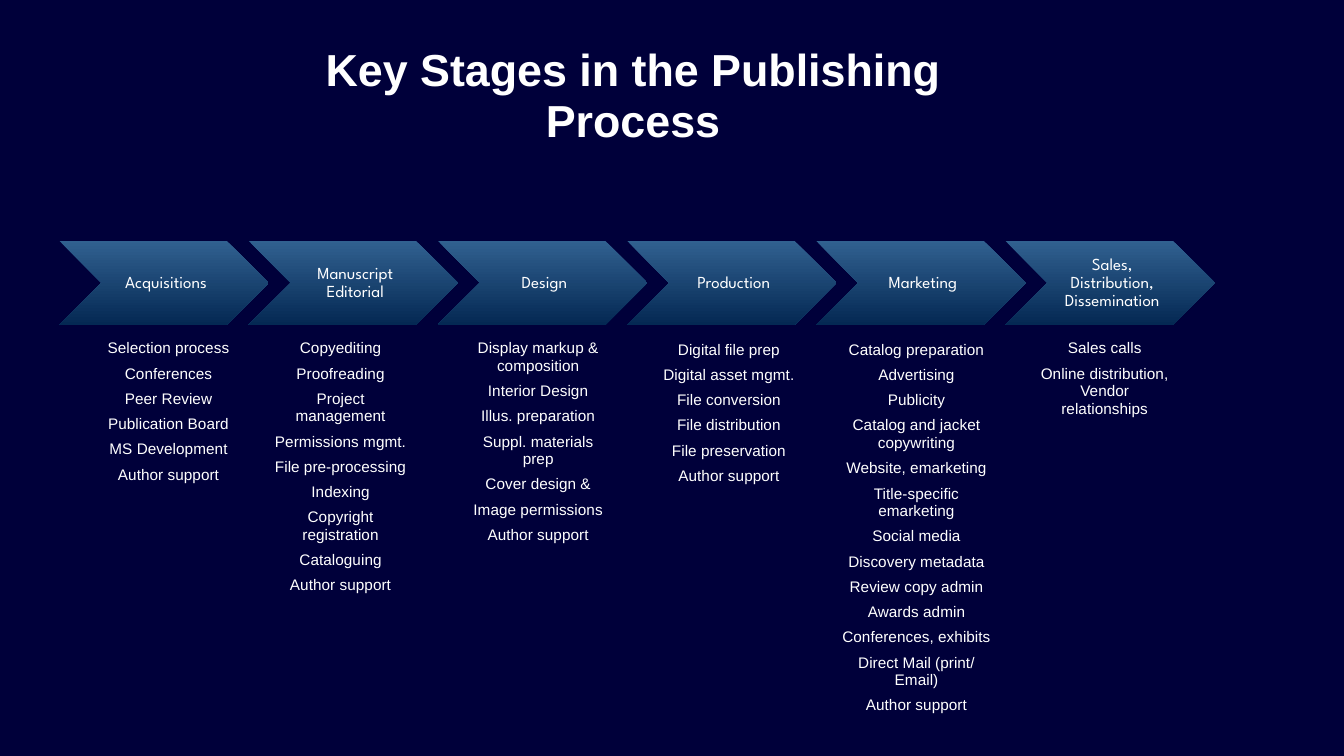
from pptx import Presentation
from pptx.dml.color import RGBColor
from pptx.enum.shapes import MSO_SHAPE
from pptx.enum.text import MSO_ANCHOR, MSO_AUTO_SIZE, PP_ALIGN
from pptx.util import Inches, Pt

NAVY = RGBColor(0x00, 0x00, 0x3A)
STEEL = RGBColor(0x31, 0x61, 0x90)
DEEP_BLUE = RGBColor(0x04, 0x28, 0x53)
WHITE = RGBColor(0xFF, 0xFF, 0xFF)

TITLE = "Key Stages in the Publishing Process"

# Stage name, left, top and width of its task list, tasks
STAGES = [
    ("Acquisitions", 0.64, 2.48, 1.23,
     ["Selection process", "Conferences", "Peer Review", "Publication Board",
      "MS Development", "Author support"]),
    ("Manuscript Editorial", 1.92, 2.48, 1.23,
     ["Copyediting", "Proofreading", "Project management",
      "Permissions mgmt.", "File pre-processing", "Indexing",
      "Copyright registration", "Cataloguing", "Author support"]),
    ("Design", 3.39, 2.48, 1.23,
     ["Display markup & composition", "Interior Design",
      "Illus. preparation", "Suppl. materials prep", "Cover design &",
      "Image permissions", "Author support"]),
    ("Production", 4.81, 2.49, 1.23,
     ["Digital file prep", "Digital asset mgmt.", "File conversion",
      "File distribution", "File preservation", "Author support"]),
    ("Marketing", 6.14, 2.49, 1.36,
     ["Catalog preparation", "Advertising", "Publicity",
      "Catalog and jacket copywriting", "Website, emarketing",
      "Title-specific emarketing", "Social media", "Discovery metadata",
      "Review copy admin", "Awards admin", "Conferences, exhibits",
      "Direct Mail (print/ Email)", "Author support"]),
    ("Sales, Distribution, Dissemination", 7.61, 2.48, 1.22,
     ["Sales calls", "Online distribution, Vendor relationships"]),
]

# Chevron row
CHEVRON_LEFT, CHEVRON_TOP = 0.44, 1.79
CHEVRON_W, CHEVRON_H = 1.56, 0.63
CHEVRON_PITCH = 1.408

# Task lists
LIST_SIZE = 8.25
LINE_H, TASK_GAP = 0.13, 0.06


def write(sp, lines, *, size, font="Arial", bold=False, spacing=0.95, gap=0,
          anchor=MSO_ANCHOR.TOP, insets=(0.1, 0.05, 0.1, 0.05)):
    """Fill a shape with centred white paragraphs."""
    tf = sp.text_frame
    tf.word_wrap = True
    tf.auto_size = MSO_AUTO_SIZE.NONE
    tf.vertical_anchor = anchor
    (tf.margin_left, tf.margin_top,
     tf.margin_right, tf.margin_bottom) = map(Inches, insets)
    for i, line in enumerate(lines):
        p = tf.add_paragraph() if i else tf.paragraphs[0]
        p.alignment = PP_ALIGN.CENTER
        p.line_spacing = spacing
        p.space_before = Pt(gap if i else 0)
        r = p.add_run()
        r.text = line
        r.font.name = font
        r.font.size = Pt(size)
        r.font.bold = bold
        r.font.color.rgb = WHITE


prs = Presentation()
prs.slide_width, prs.slide_height = Inches(10), Inches(10) * 9 // 16
s = prs.slides.add_slide(prs.slide_layouts[5])
s.background.fill.solid()
s.background.fill.fore_color.rgb = NAVY

# Title
title = s.shapes.title
title.left, title.top = Inches(1.92), Inches(0.29)
title.width, title.height = Inches(5.58), Inches(1.31)
write(title, [TITLE], size=24, bold=True)

for i, (stage, left, top, width, tasks) in enumerate(STAGES):
    # Stage chevron
    sp = s.shapes.add_shape(
        MSO_SHAPE.CHEVRON, Inches(CHEVRON_LEFT + i * CHEVRON_PITCH),
        Inches(CHEVRON_TOP), Inches(CHEVRON_W), Inches(CHEVRON_H))
    sp.shadow.inherit = False
    sp.line.fill.background()
    sp.fill.gradient()
    sp.fill.gradient_angle = 270
    for stop, color, position in zip(sp.fill.gradient_stops,
                                     (STEEL, DEEP_BLUE), (0, 1)):
        stop.color.rgb = color
        stop.position = position
    write(sp, [stage], size=9, font="League Spartan", spacing=0.9,
          anchor=MSO_ANCHOR.MIDDLE, insets=(0.04, 0.01, 0.01, 0.01))

    # Task list below the chevron
    height = 0.1 + len(tasks) * (LINE_H + TASK_GAP)
    box = s.shapes.add_textbox(Inches(left), Inches(top),
                               Inches(width), Inches(height))
    write(box, tasks, size=LIST_SIZE, gap=LIST_SIZE / 2)

prs.save("out.pptx")
